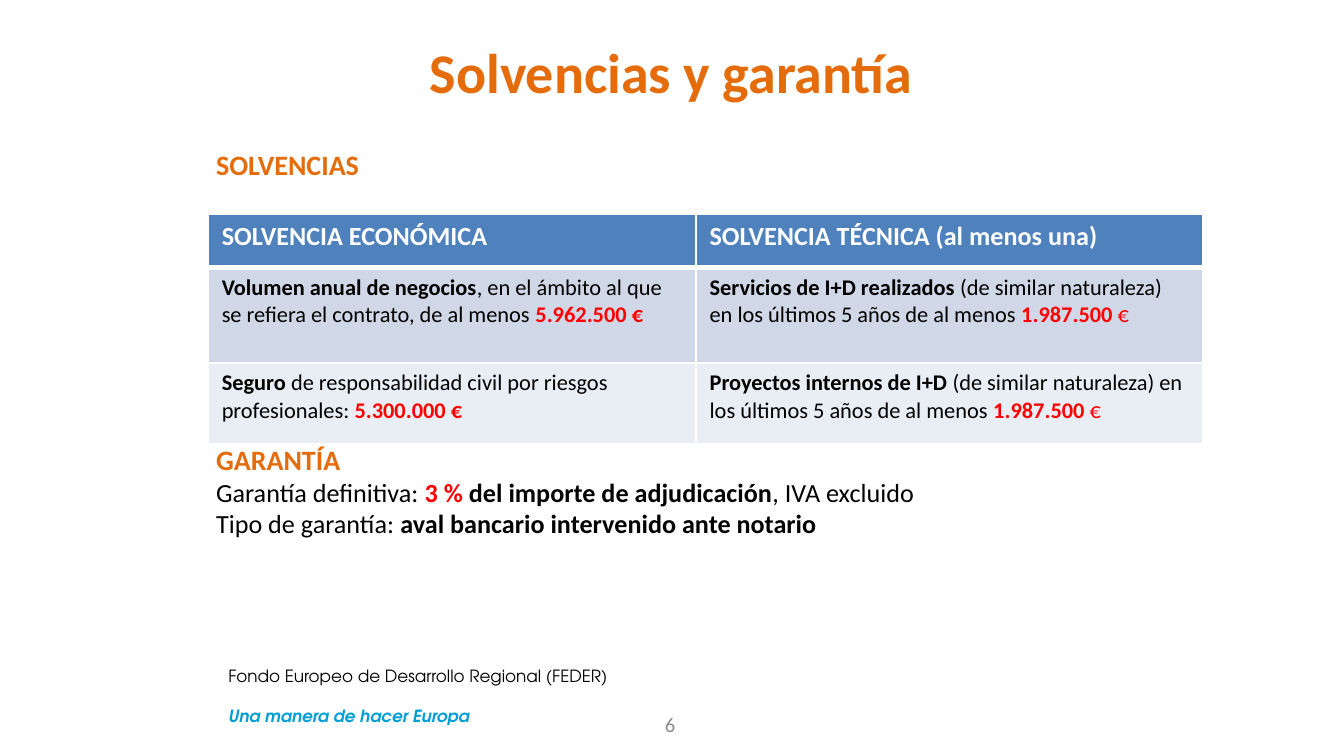
from pptx import Presentation
from pptx.dml.color import RGBColor
from pptx.enum.text import MSO_ANCHOR as Anchor, PP_ALIGN as Align
from pptx.oxml.ns import qn
from pptx.util import Inches, Pt
from lxml.etree import SubElement

ORANGE = RGBColor(0xE4, 0x6C, 0x0A)
RED = RGBColor(0xFF, 0x00, 0x00)
BLACK = RGBColor(0x00, 0x00, 0x00)
WHITE = RGBColor(0xFF, 0xFF, 0xFF)
GRAY = RGBColor(0x8C, 0x8C, 0x8C)
CYAN = RGBColor(0x00, 0x9E, 0xD6)
HEADER_BLUE = RGBColor(0x4F, 0x81, 0xBD)
BAND_DARK = RGBColor(0xD0, 0xD8, 0xE8)
BAND_LIGHT = RGBColor(0xE9, 0xED, 0xF4)


class SlideBuilder:
    font_name = "Calibri"
    footer_font = "TeX Gyre Adventor"

    def __init__(self, slide):
        self.slide = slide

    def runs(self, paragraph, parts, size, font_name=None):
        """Add (text, color, bold[, italic]) parts as runs."""
        for text, color, bold, *italic in parts:
            run = paragraph.add_run()
            run.text = text
            font = run.font
            font.name = font_name or self.font_name
            font.size = Pt(size)
            font.bold = bold
            font.italic = bool(italic and italic[0])
            font.color.rgb = color

    def text(self, left, top, width, height, lines, align=Align.LEFT,
             anchor=Anchor.TOP, font_name=None):
        """Add a text box; each line is (size, space before, parts)."""
        box = self.slide.shapes.add_textbox(
            Inches(left), Inches(top), Inches(width), Inches(height))
        frame = box.text_frame
        frame.word_wrap = True
        frame.vertical_anchor = anchor
        for index, (size, before, parts) in enumerate(lines):
            paragraph = frame.add_paragraph() if index else frame.paragraphs[0]
            paragraph.alignment = align
            if before:
                paragraph.space_before = Pt(before)
            self.runs(paragraph, parts, size, font_name)

    def borders(self, cell, bottom):
        properties = cell._tc.get_or_add_tcPr()
        for side, width in (("L", 1), ("R", 1), ("T", 1), ("B", bottom)):
            line = SubElement(properties, qn(f"a:ln{side}"), w=str(Pt(width)))
            fill = SubElement(line, qn("a:solidFill"))
            SubElement(fill, qn("a:srgbClr"), val=str(WHITE))

    def table(self, left, top, widths, heights, rows):
        """Add a table; each row is (fill, size, bottom border, cells)."""
        table = self.slide.shapes.add_table(
            len(rows), len(widths), Inches(left), Inches(top),
            Inches(sum(widths)), Inches(sum(heights))).table
        for column, width in zip(table.columns, widths):
            column.width = Inches(width)
        for row, height, (fill, size, bottom, cells) in zip(table.rows, heights, rows):
            row.height = Inches(height)
            for cell, parts in zip(row.cells, cells):
                self.borders(cell, bottom)
                cell.fill.solid()
                cell.fill.fore_color.rgb = fill
                self.runs(cell.text_frame.paragraphs[0], parts, size)


def technical(subject):
    return [
        (f"{subject} ", BLACK, True),
        ("(de similar naturaleza) en los últimos 5 años de al menos ", BLACK, False),
        ("1.987.500", RED, True),
        (" €", RED, False),
    ]


def main():
    deck = Presentation()
    deck.slide_width = Inches(10)
    deck.slide_height = Inches(10) * 9 // 16
    builder = SlideBuilder(deck.slides.add_slide(deck.slide_layouts[6]))

    builder.text(1.6, 4.98, 3.25, 0.4, [
        (9, 0, [("Fondo Europeo de Desarrollo Regional (FEDER)", BLACK, False)]),
        (9, 10.7, [("Una manera de hacer Europa", CYAN, True, True)]),
    ], anchor=Anchor.MIDDLE, font_name=builder.footer_font)
    builder.text(4.71, 5.24, 0.55, 0.3, [(11, 0, [("6", GRAY, False)])],
                 align=Align.CENTER, anchor=Anchor.MIDDLE)

    builder.text(1.51, 1.05, 7.46, 3.07, [
        (15, 0, [("SOLVENCIAS", ORANGE, True)]),
        (15, 140, [("GARANTÍA", ORANGE, True)]),
        (14, 0, [("Garantía definitiva: ", BLACK, False),
                 ("3 %", RED, True),
                 (" del importe de adjudicación", BLACK, True),
                 (", IVA excluido", BLACK, False)]),
        (14, 0, [("Tipo de garantía: ", BLACK, False),
                 ("aval bancario intervenido ante notario", BLACK, True)]),
    ])
    builder.text(1.62, 0.23, 6.75, 0.77,
                 [(30, 0, [("Solvencias y garantía", ORANGE, True)])],
                 align=Align.CENTER)

    turnover = [
        ("Volumen anual de negocios", BLACK, True),
        (", en el ámbito al que se refiera el contrato, de al menos ", BLACK, False),
        ("5.962.500 €", RED, True),
    ]
    insurance = [
        ("Seguro", BLACK, True),
        (" de responsabilidad civil por riesgos profesionales: ", BLACK, False),
        ("5.300.000 €", RED, True),
    ]
    builder.table(1.55, 1.59, [3.63, 3.77], [0.4, 0.71, 0.6], [
        (HEADER_BLUE, 14, 3, [[("SOLVENCIA ECONÓMICA", WHITE, True)],
                              [("SOLVENCIA TÉCNICA (al menos una)", WHITE, True)]]),
        (BAND_DARK, 12, 1, [turnover, technical("Servicios de I+D realizados")]),
        (BAND_LIGHT, 12, 1, [insurance, technical("Proyectos internos de I+D")]),
    ])

    deck.save("out.pptx")


if __name__ == "__main__":
    main()
